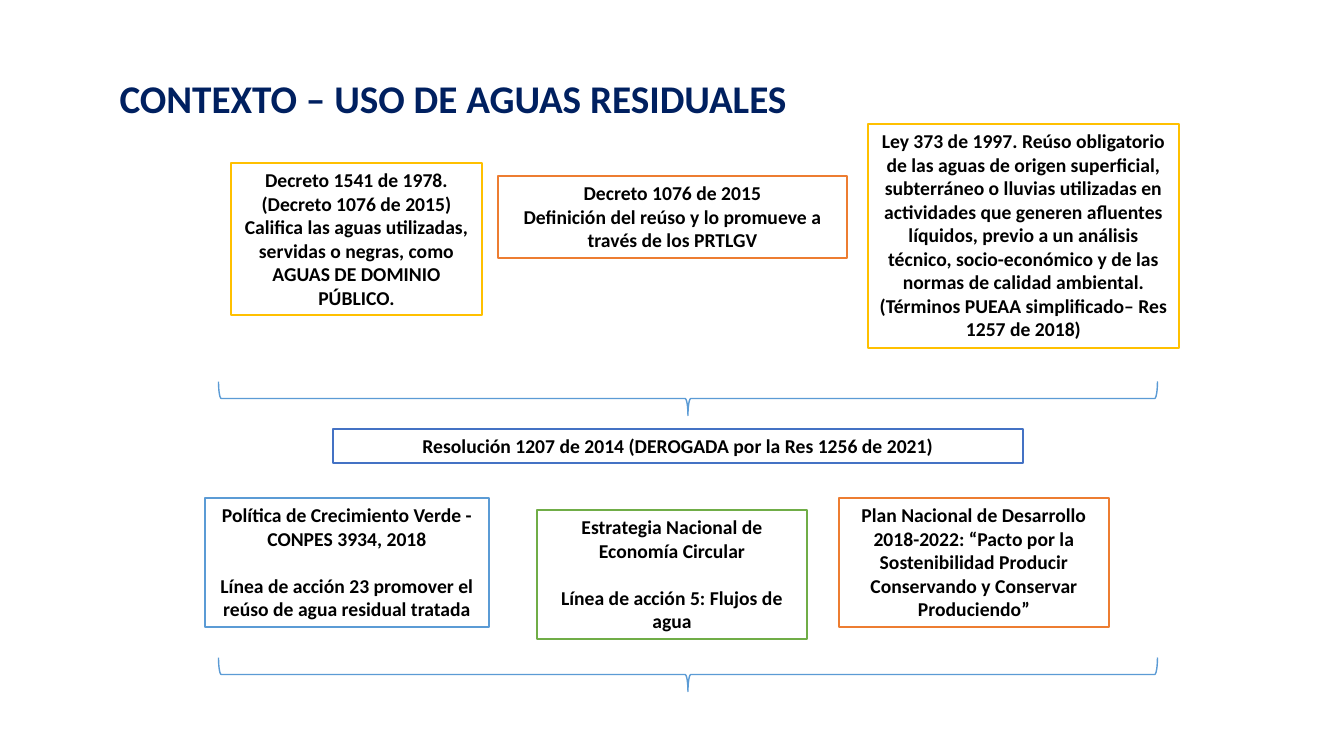
from pptx import Presentation
from pptx import util as u
from pptx.dml.color import RGBColor
from pptx.enum import shapes, text

EMU_PER_PX = 914400 / 100.8
FONT = "Calibri"

BOXES = [
    (333, 429, 690, 34, "4472C4", ["Resolución 1207 de 2014 (DEROGADA por la Res 1256 de 2021)"], 0),
    (205, 498, 284, 129, "5B9BD5", [
        "Política de Crecimiento Verde - CONPES 3934, 2018",
        "Línea de acción 23 promover el reúso de agua residual tratada"], 17),
    (537, 510, 270, 129, "70AD47", [
        "Estrategia Nacional de Economía Circular",
        "Línea de acción 5: Flujos de agua"], 17),
    (231, 163, 251, 152, "FFC000", [
        "Decreto 1541 de 1978. (Decreto 1076 de 2015) Califica las aguas utilizadas, "
        "servidas o negras, como AGUAS DE DOMINIO PÚBLICO."], 0),
    (498, 176, 349, 82, "ED7D31", [
        "Decreto 1076 de 2015",
        "Definición del reúso y lo promueve a través de los PRTLGV"], 0),
    (868, 124, 311, 224, "FFC000", [
        "Ley 373 de 1997. Reúso obligatorio de las aguas de origen superficial, "
        "subterráneo o lluvias utilizadas en actividades que generen afluentes líquidos, "
        "previo a un análisis técnico, socio-económico y de las normas de calidad ambiental. "
        "(Términos PUEAA simplificado– Res 1257 de 2018)"], 0),
    (839, 498, 270, 129, "ED7D31", [
        "Plan Nacional de Desarrollo 2018-2022: “Pacto por la Sostenibilidad Producir "
        "Conservando y Conservar Produciendo”"], 0),
]


def px(*lengths):
    return [u.Emu(round(length * EMU_PER_PX)) for length in lengths]


def color(value):
    return RGBColor.from_string(value)


def write(shape, lines, size, ink, gap=0):
    frame = shape.text_frame
    frame.word_wrap = True
    frame.text = "\n".join(lines)
    for index, para in enumerate(frame.paragraphs):
        para.alignment = text.PP_ALIGN.CENTER
        if index:
            para.space_before = u.Pt(gap)
        for span in para.runs:
            span.font.name = FONT
            span.font.size = u.Pt(size)
            span.font.bold = True
            span.font.color.rgb = color(ink)
    return frame


def add_outlined(page, kind, left, top, width, height, line):
    shape = page.shapes.add_shape(kind, *px(left, top, width, height))
    shape.shadow.inherit = False
    shape.line.color.rgb = color(line)
    shape.line.width = u.Pt(1)
    return shape


def add_box(page, left, top, width, height, line, lines, gap):
    box = add_outlined(page, shapes.MSO_SHAPE.RECTANGLE, left, top, width, height, line)
    box.fill.solid()
    box.fill.fore_color.rgb = color("FFFFFF")
    frame = write(box, lines, 14, "000000", gap)
    frame.vertical_anchor = text.MSO_ANCHOR.TOP
    frame.auto_size = text.MSO_AUTO_SIZE.SHAPE_TO_FIT_TEXT


def add_brace(page, top):
    brace = add_outlined(page, shapes.MSO_SHAPE.LEFT_BRACE, 671, top, 34, 939, "5B9BD5")
    brace.fill.background()
    brace.rotation = 270


def add_title(page, caption):
    title = page.shapes.add_textbox(*px(60, 45, 786, 105))
    frame = write(title, [caption], 28, "002060")
    frame.vertical_anchor = text.MSO_ANCHOR.MIDDLE


def main():
    deck = Presentation()
    deck.slide_width, deck.slide_height = px(1344, 756)
    page = deck.slides.add_slide(deck.slide_layouts[6])
    for box in BOXES:
        add_box(page, *box)
    for top in (-71, 205):
        add_brace(page, top)
    add_title(page, "CONTEXTO – USO DE AGUAS RESIDUALES")
    deck.save("out.pptx")


if __name__ == "__main__":
    main()
